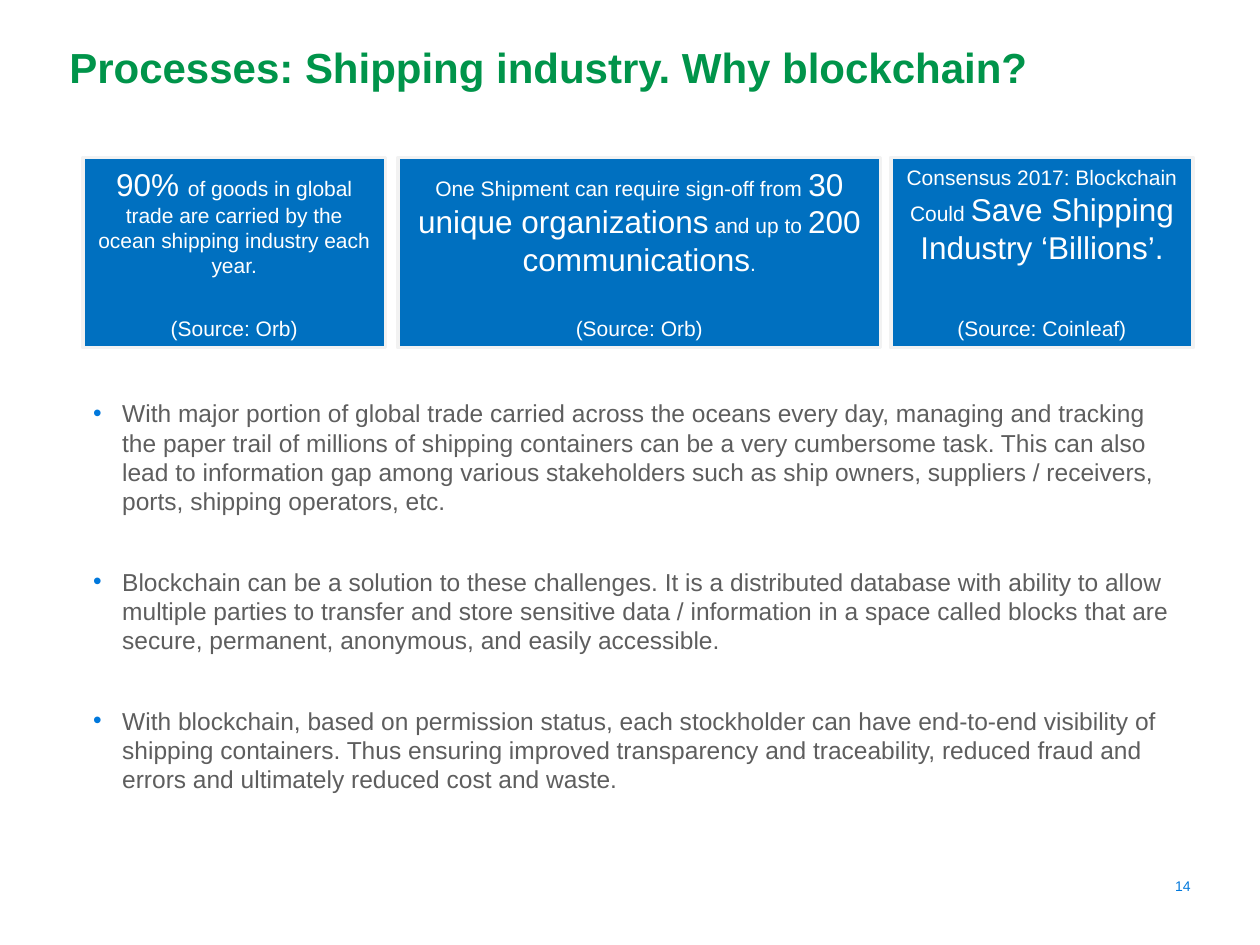
from lxml import etree
from pptx import Presentation
from pptx.dml.color import RGBColor
from pptx.enum.shapes import MSO_SHAPE
from pptx.enum.text import MSO_ANCHOR, MSO_AUTO_SIZE, PP_ALIGN
from pptx.oxml.ns import qn
from pptx.util import Inches, Pt

RECTANGLE = MSO_SHAPE.RECTANGLE
TOP, MIDDLE, BOTTOM = MSO_ANCHOR.TOP, MSO_ANCHOR.MIDDLE, MSO_ANCHOR.BOTTOM
LEFT, CENTER, RIGHT = PP_ALIGN.LEFT, PP_ALIGN.CENTER, PP_ALIGN.RIGHT
NO_AUTOFIT = MSO_AUTO_SIZE.NONE

COLORS = {"title": "00944A", "accent": "0078DC", "body": "5E5E5E",
          "card": "0070C0", "border": "F2F2F2", "card_text": "FFFFFF"}
FONT = "Arial"
TITLE = "Processes: Shipping industry. Why blockchain?"
PAGE_NUMBER = "14"
SMALL, LARGE = 12, 18
CARDS = [
    {"left": 0.66, "width": 2.4, "gap": 21.5, "source": "(Source: Orb)",
     "runs": [("90% ", LARGE),
              ("of goods in global trade are carried by the ocean shipping industry each year.", SMALL)]},
    {"left": 3.16, "width": 3.83, "gap": 21.5, "source": "(Source: Orb)",
     "runs": [("One Shipment can require sign-off from ", SMALL),
              ("30 unique organizations", LARGE), (" and up to ", SMALL),
              ("200 communications", LARGE), (".", SMALL)]},
    {"left": 7.07, "width": 2.4, "gap": 28.5, "source": "(Source: Coinleaf)",
     "runs": [("Consensus 2017: Blockchain Could ", SMALL),
              ("Save Shipping Industry ‘Billions’.", LARGE)]},
]
BULLETS = [
    "With major portion of global trade carried across the oceans every day, managing and tracking "
    "the paper trail of millions of shipping containers can be a very cumbersome task. This can also "
    "lead to information gap among various stakeholders such as ship owners, suppliers / receivers, "
    "ports, shipping operators, etc.",
    "Blockchain can be a solution to these challenges. It is a distributed database with ability to "
    "allow multiple parties to transfer and store sensitive data / information in a space called "
    "blocks that are secure, permanent, anonymous, and easily accessible.",
    "With blockchain, based on permission status, each stockholder can have end-to-end visibility of "
    "shipping containers. Thus ensuring improved transparency and traceability, reduced fraud and "
    "errors and ultimately reduced cost and waste.",
]


def color(name):
    return RGBColor.from_string(COLORS[name])


def style(span, size, color_name, bold=False):
    span.font.name = FONT
    span.font.size = Pt(size)
    span.font.bold = bold
    span.font.color.rgb = color(color_name)


def place(box, left, top, width, height):
    box.left, box.top = Inches(left), Inches(top)
    box.width, box.height = Inches(width), Inches(height)


def set_frame(frame, anchor, inset_x, inset_y):
    frame.word_wrap = True
    frame.auto_size = NO_AUTOFIT
    frame.vertical_anchor = anchor
    frame.margin_left = frame.margin_right = Inches(inset_x)
    frame.margin_top = frame.margin_bottom = Inches(inset_y)


def write_line(box, text, size, color_name, anchor, align, bold=False):
    set_frame(box.text_frame, anchor, 0, 0)
    box.text_frame.text = text
    para = box.text_frame.paragraphs[0]
    para.alignment = align
    style(para.runs[0], size, color_name, bold)


def add_bullet(para):
    properties = para._p.get_or_add_pPr()
    properties.set("marL", str(Inches(0.23)))
    properties.set("indent", str(-Inches(0.23)))
    bullet_color = etree.SubElement(properties, qn("a:buClr"))
    etree.SubElement(bullet_color, qn("a:srgbClr"), val=COLORS["accent"])
    etree.SubElement(properties, qn("a:buFont"), typeface=FONT)
    etree.SubElement(properties, qn("a:buChar"), char="•")


def write_bullets(box):
    frame = box.text_frame
    set_frame(frame, TOP, 0.08, 0.08)
    frame.text = "\n".join(BULLETS)
    for para in frame.paragraphs:
        add_bullet(para)
        para.alignment = LEFT
        para.space_before = Pt(0)
        para.space_after = Pt(29)
        style(para.runs[0], 14, "body")


def add_card(page, card):
    box = page.shapes.add_shape(RECTANGLE, Inches(card["left"]), Inches(1.25),
                                Inches(card["width"]), Inches(1.51))
    box.shadow.inherit = False
    box.fill.solid()
    box.fill.fore_color.rgb = color("card")
    box.line.color.rgb = color("border")
    box.line.width = Pt(2)
    frame = box.text_frame
    set_frame(frame, MIDDLE, 0.1, 0.05)
    source = frame.add_paragraph()
    source.space_before = Pt(card["gap"])
    for para, runs in zip(frame.paragraphs, (card["runs"], [(card["source"], SMALL)])):
        para.alignment = CENTER
        for text, size in runs:
            span = para.add_run()
            span.text = text
            style(span, size, "card_text")


def main():
    """Build the shipping industry slide."""
    deck = Presentation()
    deck.slide_width, deck.slide_height = Inches(10), Inches(7.5)
    page = deck.slides.add_slide(deck.slide_layouts[1])
    title, body = page.shapes.title, page.placeholders[1]

    place(title, 0.55, 0.33, 8.9, 0.98)
    write_line(title, TITLE, 24, "title", TOP, LEFT, bold=True)

    place(body, 0.66, 3.08, 8.79, 2.38)
    write_bullets(body)

    for card in CARDS:
        add_card(page, card)

    number = page.shapes.add_textbox(Inches(9.06), Inches(6.65), Inches(0.39), Inches(0.45))
    write_line(number, PAGE_NUMBER, 8, "accent", BOTTOM, RIGHT)

    deck.save("out.pptx")


if __name__ == "__main__":
    main()
